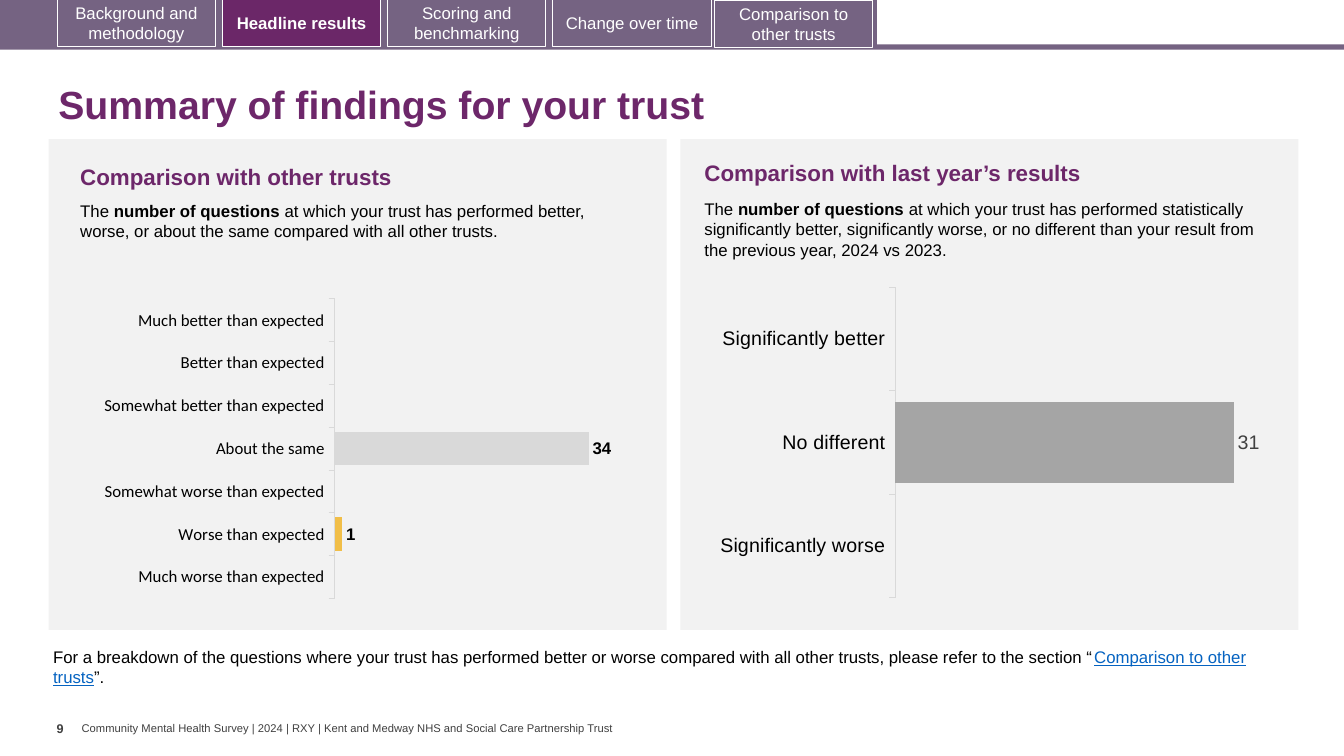
"""Build the slide that summarises the survey findings for one trust."""
from lxml.etree import SubElement
from pptx import Presentation
from pptx.chart.data import CategoryChartData
from pptx.dml.color import RGBColor
from pptx.enum.chart import XL_CHART_TYPE as ChartType
from pptx.enum.chart import XL_LABEL_POSITION as LabelPosition
from pptx.enum.chart import XL_TICK_LABEL_POSITION as TickLabels
from pptx.enum.chart import XL_TICK_MARK as TickMark
from pptx.enum.shapes import MSO_SHAPE as Preset
from pptx.enum.text import MSO_ANCHOR as Anchor
from pptx.enum.text import PP_ALIGN as Align
from pptx.oxml.ns import qn
from pptx.util import Pt

PURPLE = RGBColor(0x6D, 0x27, 0x6A)
ACTIVE_TAB = RGBColor(0x6B, 0x27, 0x68)
MAUVE = RGBColor(0x75, 0x63, 0x82)
PANEL_GREY = RGBColor(0xF2, 0xF2, 0xF2)
AXIS_GREY = RGBColor(0xD9, 0xD9, 0xD9)
DARK_GREY = RGBColor(0x40, 0x40, 0x40)
LINK_BLUE = RGBColor(0x05, 0x63, 0xC1)
SERIES_BLUE = RGBColor(0x44, 0x72, 0xC4)
MID_GREY = RGBColor(0xA5, 0xA5, 0xA5)
AMBER = RGBColor(0xF1, 0xBE, 0x48)
WHITE = RGBColor(0xFF, 0xFF, 0xFF)
BLACK = RGBColor(0, 0, 0)

TABS = (
    ("Background and methodology", 41, -0.7),
    ("Headline results", 159, -0.7),
    ("Scoring and benchmarking", 277, -0.7),
    ("Change over time", 395, -0.7),
    ("Comparison to other trusts", 510.5, 0),
)
CURRENT_TAB = "Headline results"

TRUST_RESULTS = (
    ("Much better than expected", None),
    ("Better than expected", None),
    ("Somewhat better than expected", None),
    ("About the same", 34),
    ("Somewhat worse than expected", None),
    ("Worse than expected", 1),
    ("Much worse than expected", None),
)
YEAR_RESULTS = (
    ("Significantly better", None),
    ("No different", 31),
    ("Significantly worse", None),
)


def style_font(font, size, color, bold=False, name="Arial"):
    """Set the face, size, colour and weight of a font."""
    font.name = name
    font.size = Pt(size)
    font.bold = bold
    font.color.rgb = color


def add_block(slide, box, fill):
    """Add a plain filled rectangle without outline."""
    block = slide.shapes.add_shape(Preset.RECTANGLE, *map(Pt, box))
    block.shadow.inherit = False
    block.fill.solid()
    block.fill.fore_color.rgb = fill
    block.line.fill.background()
    return block


def add_tab(slide, label, left, top):
    """Add one navigation tab, highlighted when it is the current one."""
    current = label == CURRENT_TAB
    tab = add_block(slide, (left, top, 113, 34), ACTIVE_TAB if current else MAUVE)
    tab.line.color.rgb = WHITE
    tab.line.width = Pt(0.75)
    frame = tab.text_frame
    frame.word_wrap = True
    frame.vertical_anchor = Anchor.MIDDLE
    frame.text = label
    frame.paragraphs[0].alignment = Align.CENTER
    style_font(frame.paragraphs[0].runs[0].font, 12, WHITE, current)


def add_text(slide, box, pieces, size, color=BLACK, anchor=Anchor.TOP, wrap=True):
    """Add a text box of (text, bold) pieces and return its paragraph."""
    frame = slide.shapes.add_textbox(*map(Pt, box)).text_frame
    frame.word_wrap = wrap
    frame.vertical_anchor = anchor
    if not wrap:
        frame.margin_left = frame.margin_right = 0
    paragraph = frame.paragraphs[0]
    for text, bold in pieces:
        run = paragraph.add_run()
        run.text = text
        style_font(run.font, size, color, bold)
    return paragraph


def place_plot(chart, plot_box):
    """Fix the inner plot area at the given fractions of the chart."""
    plot_area = chart._chartSpace.chart.plotArea
    for old_layout in plot_area.findall(qn("c:layout")):
        plot_area.remove(old_layout)
    layout = SubElement(plot_area, qn("c:layout"))
    plot_area.insert(0, layout)
    manual = SubElement(layout, qn("c:manualLayout"))
    settings = [("layoutTarget", "inner"), ("xMode", "edge"), ("yMode", "edge")]
    settings += zip("xywh", map(str, plot_box))
    for tag, value in settings:
        SubElement(manual, qn(f"c:{tag}")).set("val", value)


def add_result_chart(slide, box, plot_box, results, colors, maximum, size, face,
                     label_color, label_bold):
    """Add a bar chart of question counts per result."""
    counts = CategoryChartData(number_format="0")
    counts.categories = [name for name, _ in results]
    counts.add_series("Series 1", [count for _, count in results])
    chart = slide.shapes.add_chart(
        ChartType.BAR_CLUSTERED, *map(Pt, box), counts).chart
    chart.has_legend = False
    chart.has_title = False
    style_font(chart.font, size, BLACK, name=face)
    place_plot(chart, plot_box)

    result_axis, count_axis = chart.category_axis, chart.value_axis
    result_axis.reverse_order = True
    result_axis.major_tick_mark = TickMark.OUTSIDE
    result_axis.tick_label_position = TickLabels.LOW
    result_axis.format.line.color.rgb = AXIS_GREY
    result_axis.format.line.width = Pt(0.75)
    style_font(result_axis.tick_labels.font, size, BLACK, name=face)
    count_axis.visible = False
    count_axis.has_major_gridlines = False
    count_axis.minimum_scale = 0
    count_axis.maximum_scale = maximum

    plot = chart.plots[0]
    plot.gap_width = 27
    plot.vary_by_categories = False
    bars = plot.series[0]
    bars.invert_if_negative = False
    bars.format.fill.solid()
    bars.format.fill.fore_color.rgb = SERIES_BLUE
    for index, color in colors.items():
        fill = bars.points[index].format.fill
        fill.solid()
        fill.fore_color.rgb = color
    labels = bars.data_labels
    labels.show_value = True
    labels.position = LabelPosition.OUTSIDE_END
    style_font(labels.font, size, label_color, label_bold)


def main():
    """Build and save the slide."""
    deck = Presentation()
    deck.slide_width, deck.slide_height = Pt(960), Pt(540)
    slide = deck.slides.add_slide(deck.slide_layouts[6])

    add_text(slide, (58.3, 515.5, 384.5, 9.4),
             [("Community Mental Health Survey | 2024 | RXY | "
               "Kent and Medway NHS and Social Care Partnership Trust", False)],
             8, DARK_GREY, Anchor.MIDDLE, wrap=False)
    add_block(slide, (0, 31.7, 960, 3.8), MAUVE)
    add_block(slide, (0, 0, 626.4, 34), MAUVE)
    for tab in TABS:
        add_tab(slide, *tab)

    title = add_text(slide, (34.6, 50.4, 899.3, 51.8),
                     [("Summary of findings for your trust", True)],
                     28, PURPLE, Anchor.MIDDLE)
    title.line_spacing = 0.9

    for left in (34.8, 486):
        add_block(slide, (left, 99.4, 441.4, 350.6), PANEL_GREY)
    add_text(slide, (50.2, 113, 397.4, 26.6),
             [("Comparison with other trusts", True)], 16, PURPLE)
    add_text(slide, (50.2, 139.6, 381, 51),
             [("The ", False), ("number of questions ", True),
              ("at which your trust has performed better, worse, or about the "
               "same compared with all other trusts.", False)], 12)
    add_result_chart(slide, (29.5, 195.8, 448.6, 245.5),
                     (0.467, 0.072, 0.476, 0.872), TRUST_RESULTS,
                     {3: AXIS_GREY, 5: AMBER}, 40, 12, "Calibri", BLACK, True)

    add_text(slide, (496.1, 110.2, 394.6, 26.6),
             [("Comparison with last year’s results", True)], 16, PURPLE)
    add_text(slide, (496.1, 138.6, 413.3, 51),
             [("The ", False), ("number of questions ", True),
              ("at which your trust has performed statistically significantly "
               "better, significantly worse, or no different than your result "
               "from the previous year, 2024 vs 2023.", False)], 12)
    add_result_chart(slide, (478.1, 196.6, 448.6, 244.1),
                     (0.36, 0.035, 0.608, 0.909), YEAR_RESULTS,
                     {1: MID_GREY}, 35, 14, "Arial", DARK_GREY, False)

    referral = add_text(
        slide, (30.8, 458.6, 879.1, 36),
        [("For a breakdown of the questions where your trust has performed "
          "better or worse compared with all other trusts, please refer to "
          "the section “", False),
         ("Comparison to other trusts", False), ("”.", False)], 12)
    section = referral.runs[1].font
    section.color.rgb = LINK_BLUE
    section.underline = True
    add_text(slide, (40.5, 511.2, 18, 28.8), [("9", True)], 9, DARK_GREY, wrap=False)
    deck.save("out.pptx")


if __name__ == "__main__":
    main()
